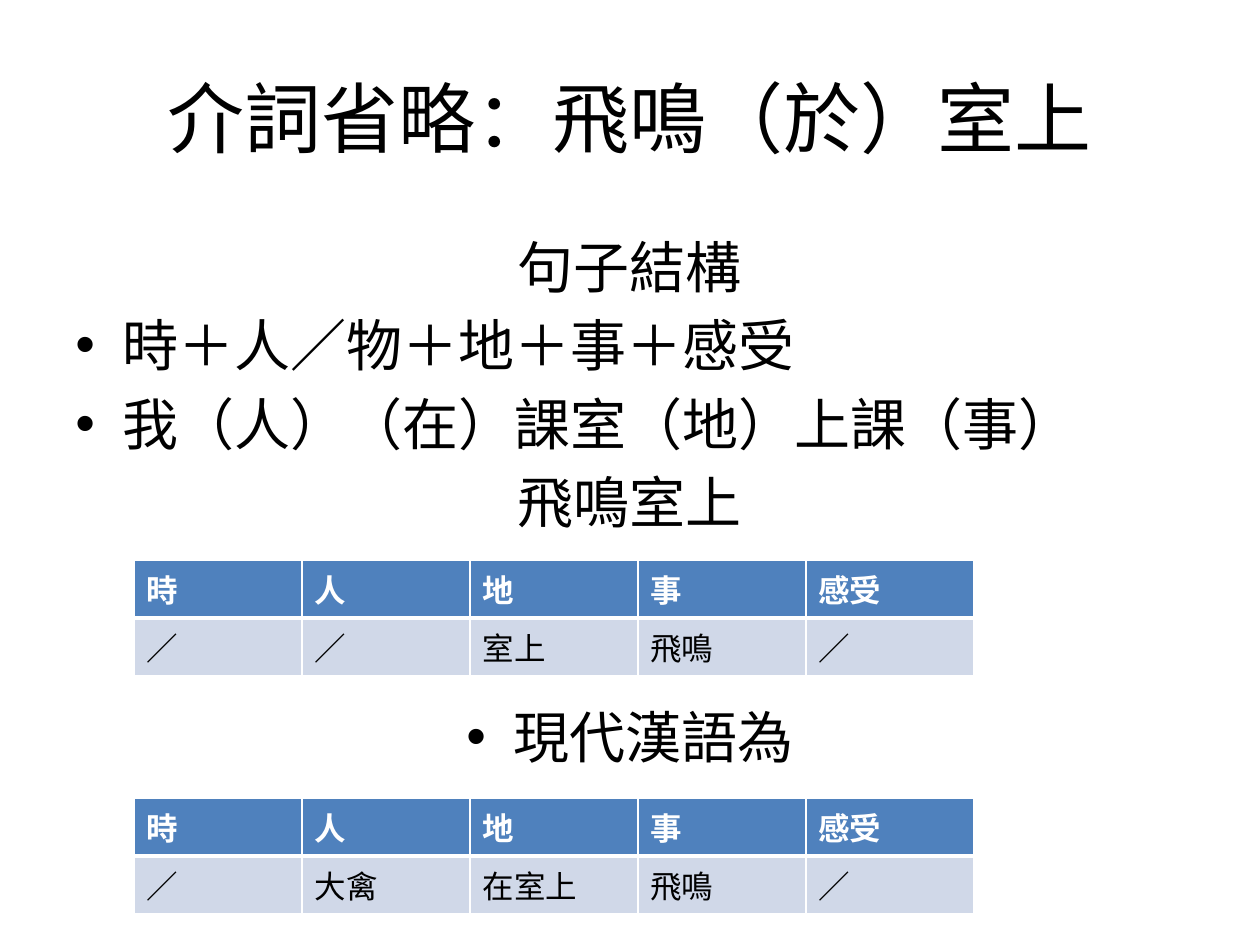
from lxml import etree
from pptx import Presentation
from pptx.dml.color import RGBColor
from pptx.enum.text import MSO_ANCHOR, PP_ALIGN
from pptx.oxml.ns import qn
from pptx.util import Emu, Pt

LEFT, CENTER = PP_ALIGN.LEFT, PP_ALIGN.CENTER
MIDDLE = MSO_ANCHOR.MIDDLE
FONT = "Calibri"
BLACK, WHITE, HEADER_BLUE, ROW_BLUE = "000000", "FFFFFF", "4F81BD", "D0D8E8"

TITLE = "介詞省略：飛鳴（於）室上"
BODY = [
    ("句子結構", CENTER, False, 6.4),
    ("時＋人／物＋地＋事＋感受", LEFT, True, 6.4),
    ("我（人）（在）課室（地）上課（事）", LEFT, True, 6.4),
    ("飛鳴室上", CENTER, False, 6.4),
    ("現代漢語為", CENTER, True, 96),
]
HEADERS = ["時", "人", "地", "事", "感受"]
SENTENCES = [
    (560, ["／", "／", "室上", "飛鳴", "／"]),
    (798, ["／", "大禽", "在室上", "飛鳴", "／"]),
]
TABLE_LEFT, COLUMN_WIDTH, ROW_HEIGHT = 134, 168, 58
INDENT = 47


def px(length):
    return Emu(round(length * 914400 / 126))


def color(value):
    return RGBColor.from_string(value)


def write(paragraph, text, size=18, ink=BLACK, bold=False, align=LEFT, before=0):
    paragraph.alignment = align
    paragraph.space_before = Pt(before)
    run = paragraph.add_run()
    run.text = text
    run.font.name = FONT
    run.font.size = Pt(size)
    run.font.bold = bold
    run.font.color.rgb = color(ink)


def hang(paragraph, bulleted):
    properties = paragraph._p.get_or_add_pPr()
    properties.set("marL", str(px(INDENT)))
    properties.set("indent", str(-px(INDENT)))
    if bulleted:
        etree.SubElement(properties, qn("a:buFont")).set("typeface", "Arial")
        etree.SubElement(properties, qn("a:buChar")).set("char", "•")
    else:
        etree.SubElement(properties, qn("a:buNone"))


def border(cell, bottom):
    properties = cell._tc.get_or_add_tcPr()
    for side, points in (("L", 1), ("R", 1), ("T", 1), ("B", bottom)):
        line = etree.SubElement(properties, qn(f"a:ln{side}"))
        line.set("w", str(Pt(points)))
        fill = etree.SubElement(line, qn("a:solidFill"))
        etree.SubElement(fill, qn("a:srgbClr")).set("val", WHITE)


def add_sentence(slide, top, words):
    rows = [
        (HEADERS, HEADER_BLUE, WHITE, True, 3),
        (words, ROW_BLUE, BLACK, False, 1),
    ]
    table = slide.shapes.add_table(
        len(rows), len(HEADERS), px(TABLE_LEFT), px(top),
        px(COLUMN_WIDTH * len(HEADERS)), px(ROW_HEIGHT * len(rows)),
    ).table
    for r, (texts, fill, ink, bold, bottom) in enumerate(rows):
        for c, text in enumerate(texts):
            cell = table.cell(r, c)
            border(cell, bottom)
            cell.fill.solid()
            cell.fill.fore_color.rgb = color(fill)
            write(cell.text_frame.paragraphs[0], text, ink=ink, bold=bold)


def main():
    deck = Presentation()
    deck.slide_width, deck.slide_height = px(1260), px(945)
    slide = deck.slides.add_slide(deck.slide_layouts[5])

    title = slide.shapes.title
    title.left, title.top, title.width, title.height = map(px, (63, 38, 1134, 158))
    title.text_frame.vertical_anchor = MIDDLE
    write(title.text_frame.paragraphs[0], TITLE, size=44, align=CENTER)

    body = slide.shapes.add_textbox(*map(px, (63, 226, 1134, 624))).text_frame
    body.word_wrap = True
    for i, (text, align, bulleted, before) in enumerate(BODY):
        paragraph = body.add_paragraph() if i else body.paragraphs[0]
        write(paragraph, text, size=32, align=align, before=before)
        hang(paragraph, bulleted)

    for top, words in SENTENCES:
        add_sentence(slide, top, words)
    deck.save("out.pptx")


if __name__ == "__main__":
    main()
